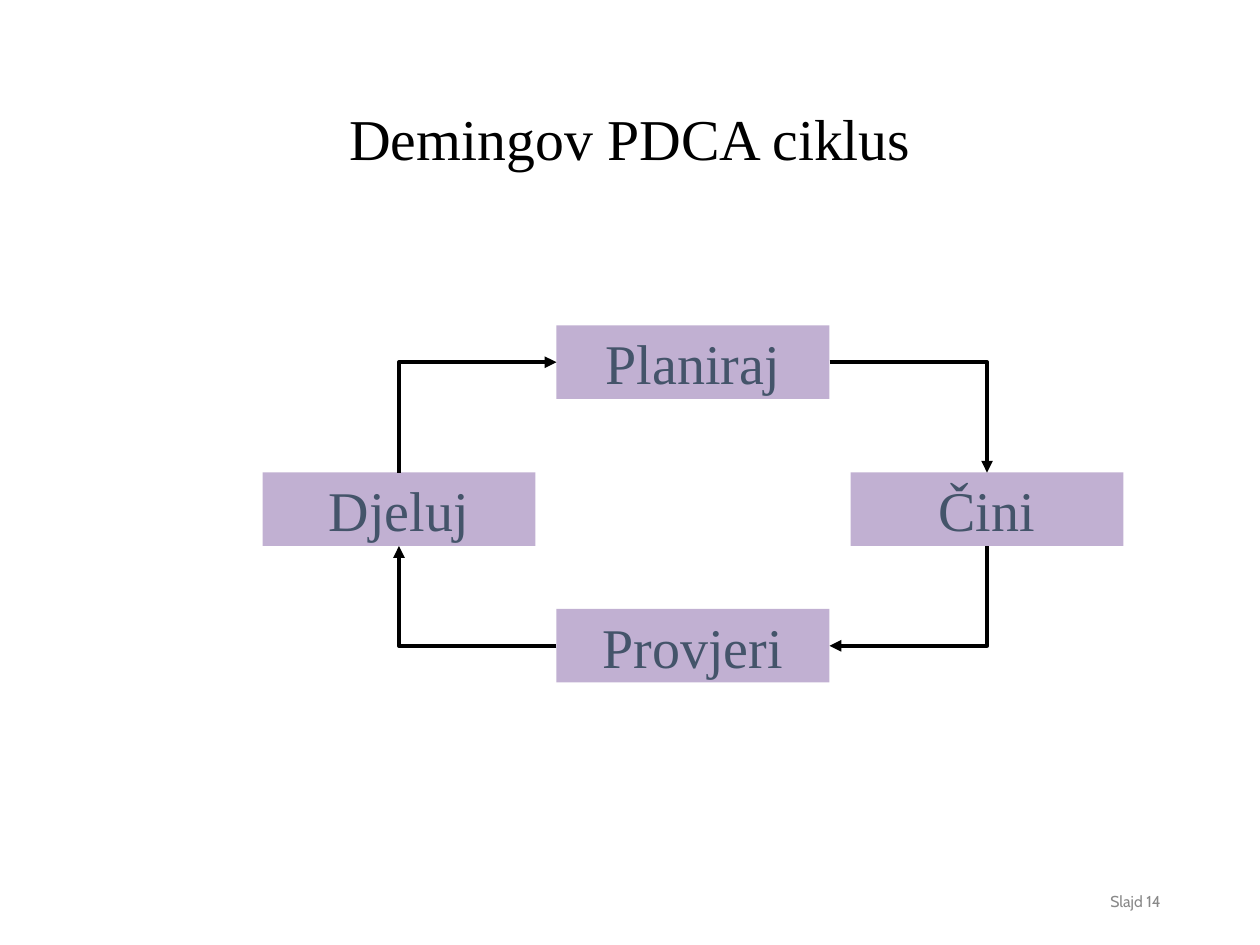
from typing import NamedTuple

from lxml.etree import SubElement
from pptx import Presentation
from pptx.dml.color import RGBColor
from pptx.enum.shapes import MSO_CONNECTOR as Connector, MSO_SHAPE as Preset
from pptx.enum.text import MSO_ANCHOR as Anchor, PP_ALIGN as Align
from pptx.oxml.ns import qn
from pptx.shapes.shapetree import SlideShapes
from pptx.text.text import TextFrame
from pptx.util import Inches, Pt

BLACK = RGBColor(0x00, 0x00, 0x00)
GRAY = RGBColor(0x89, 0x89, 0x89)
SLATE = RGBColor(0x44, 0x54, 0x6A)
PURPLE = RGBColor(0x7C, 0x59, 0xA1)
SERIF, SANS = "Times New Roman", "Cabin"
WIDTH, HEIGHT = Inches(10), Inches(7.5)
CELL = WIDTH // 120
STEP_COLS, STEP_ROWS = 26, 7
DIRECTIONS = [(1, 0), (0, 1), (-1, 0), (0, -1)]


class Step(NamedTuple):
    """A step of the cycle, placed by grid column and row."""
    label: str
    col: int
    row: int

    def side(self, direction: tuple[int, int]) -> tuple[float, float]:
        """Return the middle of the side that faces a direction."""
        across, down = direction
        return (self.col + STEP_COLS * (1 + across) / 2,
                self.row + STEP_ROWS * (1 + down) / 2)


class Caption(NamedTuple):
    """Free text, placed by shares of the slide."""
    text: str
    left: float
    top: float
    width: float
    height: float
    font: str
    size: int
    color: RGBColor
    align: Align
    spacing: float


CYCLE = [
    Step("Planiraj", 53, 31),
    Step("Čini", 81, 45),
    Step("Provjeri", 53, 58),
    Step("Djeluj", 25, 45),
]
CAPTIONS = [
    Caption("Demingov PDCA ciklus", 0.069, 0.053, 0.862, 0.193,
            SERIF, 33, BLACK, Align.CENTER, 0.9),
    Caption("Slajd 14", 0.706, 0.927, 0.225, 0.053,
            SANS, 9, GRAY, Align.RIGHT, 1.0),
]


def write(frame: TextFrame, text: str, font: str, size: int,
          color: RGBColor, align: Align, wrap: bool) -> None:
    """Put one styled run in a vertically centred frame."""
    frame.word_wrap = wrap
    frame.vertical_anchor = Anchor.MIDDLE
    paragraph = frame.paragraphs[0]
    paragraph.alignment = align
    run = paragraph.add_run()
    run.text = text
    run.font.name, run.font.size = font, Pt(size)
    run.font.color.rgb = color


def draw_caption(shapes: SlideShapes, caption: Caption) -> None:
    """Draw a caption."""
    box = shapes.add_textbox(
        int(caption.left * WIDTH), int(caption.top * HEIGHT),
        int(caption.width * WIDTH), int(caption.height * HEIGHT))
    write(box.text_frame, caption.text, caption.font, caption.size,
          caption.color, caption.align, True)
    box.text_frame.paragraphs[0].line_spacing = caption.spacing


def draw_step(shapes: SlideShapes, step: Step) -> None:
    """Draw a step as a translucent box."""
    box = shapes.add_shape(Preset.RECTANGLE, step.col * CELL, step.row * CELL,
                           STEP_COLS * CELL, STEP_ROWS * CELL)
    box.shadow.inherit = False
    box.fill.solid()
    box.fill.fore_color.rgb = PURPLE
    tint = next(box.element.spPr.iter(qn("a:srgbClr")))
    SubElement(tint, qn("a:alpha"), val="47000")
    box.line.fill.background()
    write(box.text_frame, step.label, SERIF, 32, SLATE, Align.CENTER, False)


def draw_turn(shapes: SlideShapes, source: Step, target: Step, quarter: int) -> None:
    """Draw a one-bend arrow, rotated clockwise by quarter turns."""
    x1, y1 = source.side(DIRECTIONS[quarter])
    x2, y2 = target.side(DIRECTIONS[quarter - 1])
    width, height = abs(x2 - x1), abs(y2 - y1)
    if quarter % 2:
        width, height = height, width
    left, top = (x1 + x2 - width) / 2, (y1 + y2 - height) / 2
    arrow = shapes.add_connector(
        Connector.ELBOW, int(left * CELL), int(top * CELL),
        int((left + width) * CELL), int((top + height) * CELL))
    arrow.line.color.rgb = BLACK
    arrow.line.width = Pt(2.25)
    properties = arrow._element.spPr
    properties.find(qn("a:xfrm")).set("rot", str(quarter * 90 * 60000))
    properties.find(qn("a:prstGeom")).set("prst", "bentConnector2")
    SubElement(properties.find(qn("a:ln")), qn("a:tailEnd"), type="triangle")
    SubElement(properties, qn("a:effectLst"))


def main() -> None:
    """Build the PDCA cycle slide."""
    deck = Presentation()
    deck.slide_width, deck.slide_height = WIDTH, HEIGHT
    shapes = deck.slides.add_slide(deck.slide_layouts[6]).shapes
    for caption in CAPTIONS:
        draw_caption(shapes, caption)
    for step in CYCLE:
        draw_step(shapes, step)
    for quarter, step in enumerate(CYCLE):
        draw_turn(shapes, step, CYCLE[(quarter + 1) % len(CYCLE)], quarter)
    deck.save("out.pptx")


if __name__ == "__main__":
    main()
